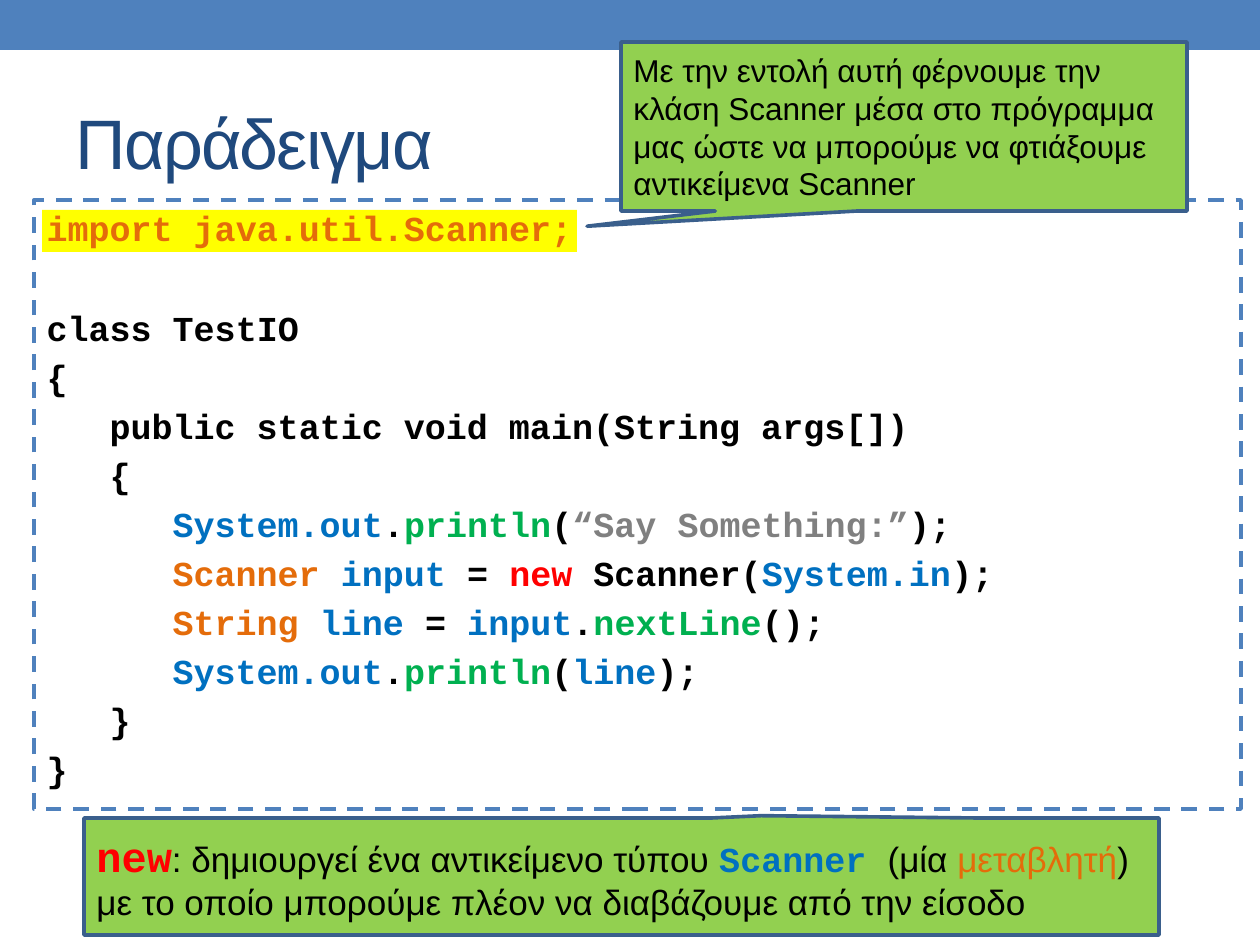
"""Build the slide that explains reading input with a Java Scanner."""
from lxml.etree import SubElement
from pptx import Presentation
from pptx.dml.color import RGBColor
from pptx.enum.dml import MSO_LINE
from pptx.enum.shapes import MSO_SHAPE
from pptx.enum.text import MSO_ANCHOR, MSO_AUTO_SIZE, PP_ALIGN
from pptx.oxml.ns import qn
from pptx.util import Emu, Pt

PX = 914400 / 126
BLUE = RGBColor(0x4F, 0x81, 0xBD)
NAVY = RGBColor(0x1F, 0x49, 0x7D)
OUTLINE = RGBColor(0x3A, 0x5F, 0x8C)
LIME = RGBColor(0x92, 0xD0, 0x50)
YELLOW = RGBColor(0xFF, 0xFF, 0x00)
BLACK = RGBColor(0x00, 0x00, 0x00)
ORANGE = RGBColor(0xE4, 0x6C, 0x0A)
SKY = RGBColor(0x00, 0x70, 0xC0)
GREEN = RGBColor(0x00, 0xB0, 0x50)
GRAY = RGBColor(0x80, 0x80, 0x80)
RED = RGBColor(0xFF, 0x00, 0x00)
SANS, MONO = "Arial", "Courier New"


def box(*lengths):
    return [Emu(round(length * PX)) for length in lengths]


def add_block(preset, place, fill):
    block = slide.shapes.add_shape(preset, *box(*place))
    block.shadow.inherit = False
    block.fill.solid()
    block.fill.fore_color.rgb = fill
    block.line.fill.background()
    return block


presentation = Presentation()
presentation.slide_width, presentation.slide_height = box(1260, 945)
slide = presentation.slides.add_slide(presentation.slide_layouts[1])
title, code = slide.placeholders

for place, fill in [((0, 0, 1260, 50), BLUE), ((42, 210, 535, 42), YELLOW)]:
    band = add_block(MSO_SHAPE.RECTANGLE, place, fill)
    title._element.addprevious(band._element)

title.left, title.top, title.width, title.height = box(63, 73, 1134, 136)
title.text_frame.auto_size = MSO_AUTO_SIZE.NONE
title.text_frame.vertical_anchor = MSO_ANCHOR.MIDDLE
heading = title.text_frame.paragraphs[0]
heading.alignment = PP_ALIGN.LEFT
heading_run = heading.add_run()
heading_run.text = "Παράδειγμα"
heading_run.font.name = SANS
heading_run.font.size = Pt(40)
heading_run.font.color.rgb = NAVY
heading_run.font._element.set("spc", "-100")

code_lines = [
    [("import java.util.Scanner;", ORANGE)],
    [("class TestIO", BLACK)],
    [("{", BLACK)],
    [("\tpublic static void main(String args[])", BLACK)],
    [("\t{", BLACK)],
    [("\t\tSystem.out", SKY), (".", BLACK), ("println", GREEN), ("(", BLACK),
     ("“Say Something:”", GRAY), (");", BLACK)],
    [("\t\tScanner ", ORANGE), ("input", SKY), (" = ", BLACK), ("new", RED),
     (" Scanner(", BLACK), ("System.in", SKY), (");", BLACK)],
    [("\t\tString ", ORANGE), ("line", SKY), (" = ", BLACK), ("input", SKY),
     (".", BLACK), ("nextLine", GREEN), ("();", BLACK)],
    [("\t\tSystem.out", SKY), (".", BLACK), ("println", GREEN), ("(", BLACK),
     ("line", SKY), (");", BLACK)],
    [("\t}", BLACK)],
    [("}", BLACK)],
]
code.left, code.top, code.width, code.height = box(34, 200, 1207, 609)
code.line.color.rgb = BLUE
code.line.width = Pt(2.25)
code.line.dash_style = MSO_LINE.DASH
code.text_frame.auto_size = MSO_AUTO_SIZE.NONE
for number, pieces in enumerate(code_lines):
    statement = code.text_frame.add_paragraph() if number else code.text_frame.paragraphs[0]
    if number == 1:
        statement.space_before = Pt(33)
    properties = statement._p.get_or_add_pPr()
    properties.set("marL", "0")
    properties.set("indent", "0")
    SubElement(properties, qn("a:buNone"))
    statement.font.name = MONO
    statement.font.size = Pt(20)
    statement.font.bold = True
    for text, color in pieces:
        token = statement.add_run()
        token.text = text
        token.font.color.rgb = color

callouts = [
    ((84, 818, 1075, 117), (0.13, -0.52), [
        ("new", MONO, 24, RED),
        (": δημιουργεί ένα αντικείμενο τύπου ", SANS, 20, BLACK),
        ("Scanner ", MONO, 20, SKY),
        ("(μία ", SANS, 20, BLACK),
        ("μεταβλητή", SANS, 20, ORANGE),
        (") με το οποίο μπορούμε πλέον να διαβάζουμε από την είσοδο", SANS, 20, BLACK),
    ]),
    ((621, 42, 566, 169), (-0.56, 0.59), [
        ("Με την εντολή αυτή φέρνουμε την κλάση Scanner μέσα στο πρόγραμμα "
         "μας ώστε να μπορούμε να φτιάξουμε αντικείμενα Scanner", SANS, 18, BLACK),
    ]),
]
for place, tip, pieces in callouts:
    callout = add_block(MSO_SHAPE.RECTANGULAR_CALLOUT, place, LIME)
    callout.adjustments[0], callout.adjustments[1] = tip
    callout.line.color.rgb = OUTLINE
    callout.line.width = Pt(2.08)
    callout.text_frame.word_wrap = True
    callout.text_frame.vertical_anchor = MSO_ANCHOR.MIDDLE
    note = callout.text_frame.paragraphs[0]
    note.alignment = PP_ALIGN.LEFT
    for text, face, size, color in pieces:
        phrase = note.add_run()
        phrase.text = text
        phrase.font.name = face
        phrase.font.size = Pt(size)
        phrase.font.bold = face == MONO
        phrase.font.color.rgb = color

presentation.save("out.pptx")
